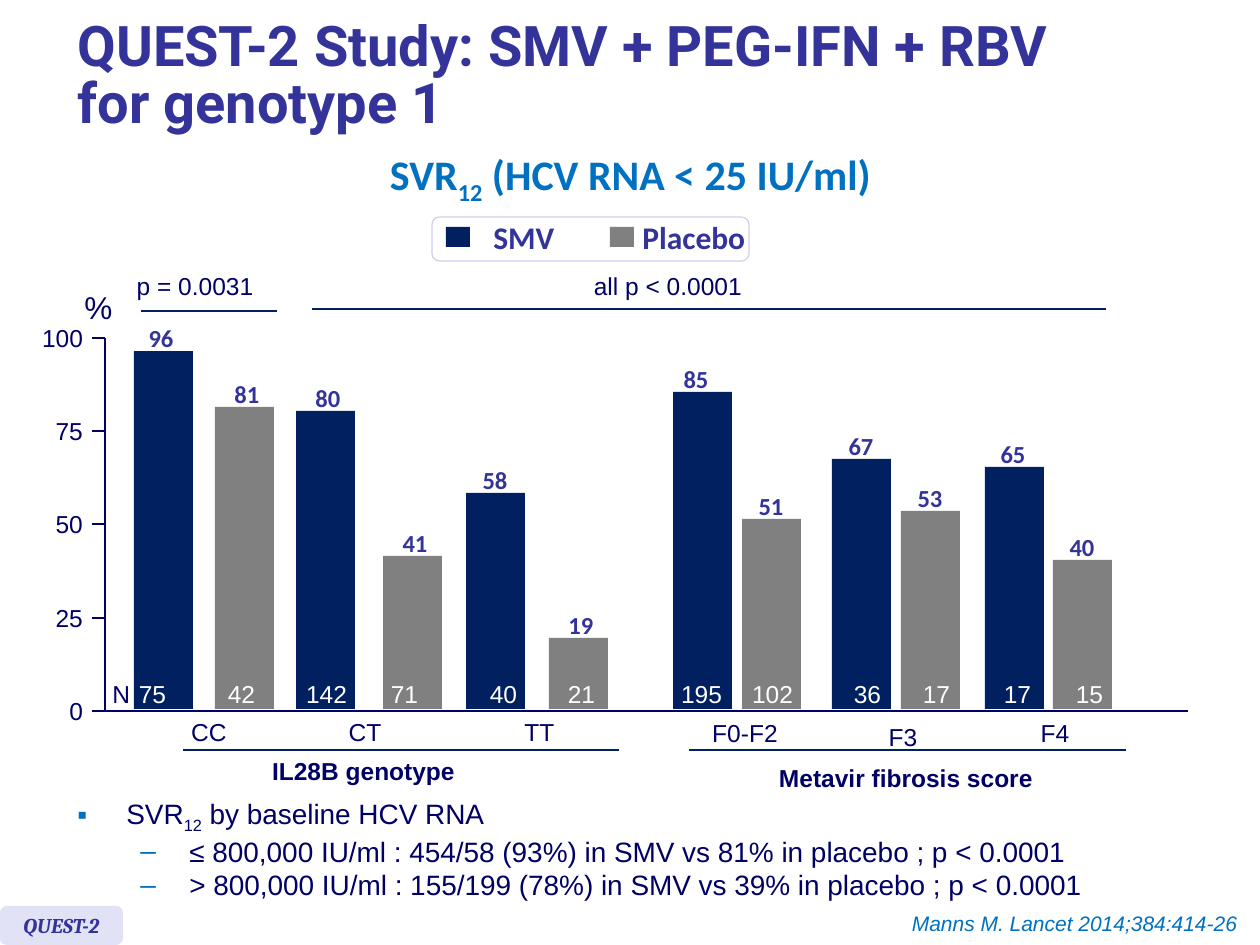
import pptx
import pptx.util
import pptx.dml.color
import pptx.enum.shapes
import pptx.enum.text
import pptx.oxml.ns
from lxml import etree

RGBColor = pptx.dml.color.RGBColor
ALIGN = pptx.enum.text.PP_ALIGN
ANCHOR = pptx.enum.text.MSO_ANCHOR
AUTO_SIZE = pptx.enum.text.MSO_AUTO_SIZE
SHAPE = pptx.enum.shapes.MSO_SHAPE
Pt = pptx.util.Pt

PX_PER_INCH = 126
NAVY = RGBColor(0x00, 0x20, 0x60)
GREY = RGBColor(0x80, 0x80, 0x80)
INK = RGBColor(0x00, 0x00, 0x66)
INDIGO = RGBColor(0x33, 0x33, 0x99)
BLUE = RGBColor(0x00, 0x70, 0xC0)
LAVENDER = RGBColor(0xE2, 0xE2, 0xF6)
LEGEND_EDGE = RGBColor(0xD0, 0xD0, 0xF0)
WHITE = RGBColor(0xFF, 0xFF, 0xFF)

AXIS = dict(name="Arial", size=Pt(14))
AXIS_BOLD = dict(AXIS, bold=True)
AXIS_UNIT = dict(name="Arial", size=Pt(18))
BODY = dict(name="Arial", size=Pt(16))
CITATION = dict(name="Arial", size=Pt(12), italic=True)
TITLE = dict(name="Roboto", size=Pt(32), bold=True)
HEADING = dict(name="Calibri", size=Pt(24), bold=True)
LEGEND = dict(name="Calibri", size=Pt(18), bold=True)
VALUE = dict(name="Calibri", size=Pt(14), bold=True)
BADGE = dict(name="Cambria", size=Pt(12), bold=True, italic=True)

# percent, N, then offsets from the axis: bar left, value centre, N centre
BARS = [
    (96, 75, 29, 56, 47), (81, 42, 110, 142, 136),
    (80, 142, 191, 223, 221), (41, 71, 278, 310, 299),
    (58, 40, 361, 390, 398), (19, 21, 444, 476, 476),
    (85, 195, 568, 591, 596), (51, 102, 637, 666, 667),
    (67, 36, 727, 756, 762), (53, 17, 796, 825, 831),
    (65, 17, 880, 908, 912), (40, 15, 948, 977, 984),
]
# name, centre, drop below the axis, width
CATEGORIES = [("CC", 104, 0, 62), ("CT", 260, 0, 58), ("TT", 434, 0, 55),
              ("F0-F2", 640, 1, 92), ("F3", 798, 5, 54), ("F4", 950, 1, 54)]
# name, line start, line end, centre, drop below the axis, width
FACTORS = [("IL28B genotype", 78, 514, 258, 39, 209),
           ("Metavir fibrosis score", 584, 1021, 801, 46, 280)]
# text, centre, width, line start, line end, line height above the plot
P_VALUES = [("p = 0.0031", 90, 142, 36, 172, 27),
            ("all p < 0.0001", 563, 174, 207, 1001, 29)]


def px(*lengths):
    return [round(length * 914400 / PX_PER_INCH) for length in lengths]


def write(paragraph, text, style, color):
    """Write text in runs; every second part between | marks is a subscript."""
    for index, part in enumerate(text.split("|")):
        run = paragraph.add_run()
        run.text = part
        for attribute, value in style.items():
            setattr(run.font, attribute, value)
        run.font.color.rgb = color
        if index % 2:
            run.font._element.set("baseline", "-25000")


def add_label(slide, box, text, style, color, align=ALIGN.CENTER,
              anchor=ANCHOR.MIDDLE, wrap=False, margin=None):
    frame = slide.shapes.add_textbox(*px(*box)).text_frame
    layout = dict(word_wrap=wrap, auto_size=AUTO_SIZE.SHAPE_TO_FIT_TEXT,
                  vertical_anchor=anchor)
    if margin is not None:
        for side in ("left", "top", "right", "bottom"):
            layout["margin_" + side] = margin
    for attribute, value in layout.items():
        setattr(frame, attribute, value)
    paragraph = frame.paragraphs[0]
    paragraph.alignment = align
    write(paragraph, text, style, color)
    return frame


def add_block(slide, box, fill, kind=SHAPE.RECTANGLE, edge=None):
    block = slide.shapes.add_shape(kind, *px(*box))
    block.shadow.inherit = False
    block.fill.solid()
    block.fill.fore_color.rgb = fill
    if edge is None:
        block.line.fill.background()
    else:
        block.line.color.rgb = edge
        block.line.width = Pt(0.75)
    return block


def add_rule(slide, x1, y1, x2, y2, color):
    rule = slide.shapes.add_connector(
        pptx.enum.shapes.MSO_CONNECTOR.STRAIGHT, *px(x1, y1, x2, y2))
    rule.line.color.rgb = color
    rule.line.width = Pt(1.5)
    etree.SubElement(rule._element.spPr, pptx.oxml.ns.qn("a:effectLst"))


def add_title(slide, box):
    title = slide.shapes.title
    title.left, title.top, title.width, title.height = px(*box)
    frame = title.text_frame
    frame.auto_size = AUTO_SIZE.NONE
    frame.vertical_anchor = ANCHOR.MIDDLE
    paragraph = frame.paragraphs[0]
    paragraph.alignment = ALIGN.LEFT
    paragraph.line_spacing = 0.85
    lines = ("QUEST-2 Study: SMV + PEG-IFN + RBV", "for genotype 1")
    write(paragraph, lines[0], TITLE, INDIGO)
    paragraph.add_line_break()
    write(paragraph, lines[1], TITLE, INDIGO)


def add_legend(slide, box):
    left, top, width, height = box
    frame = add_block(slide, box, WHITE, SHAPE.ROUNDED_RECTANGLE, LEGEND_EDGE)
    frame.adjustments[0] = 0.17
    for name, color, key, text, text_width in (
            ("SMV", NAVY, 14, 49, 87), ("Placebo", GREY, 178, 198, 130)):
        add_block(slide, (left + key, top + 10, 24, 20), color)
        add_label(slide, (left + text, top - 5, text_width, 50), name,
                  LEGEND, INDIGO, ALIGN.LEFT, ANCHOR.TOP)


def add_axes(slide, box):
    left, top, width, height = box
    base = top + height
    for percent in range(0, 101, 25):
        y = round(base - height * percent / 100)
        end = left if percent else left + width
        add_rule(slide, left - 13, y, end, y, INK)
        digits = 14 * len(str(percent))
        add_label(slide, (left - 22 - digits, y - 15, digits, 30),
                  str(percent), AXIS, INK, ALIGN.RIGHT, margin=0)
    add_rule(slide, left, top, left, base, INK)
    add_label(slide, (left - 33, top - 56, 53, 50), "%", AXIS_UNIT, INK,
              ALIGN.LEFT, ANCHOR.TOP)


def add_bars(slide, box):
    left, top, width, height = box
    base = top + height - 2
    for index, (percent, count, bar, value, n) in enumerate(BARS):
        bar_height = round(height * percent / 100)
        bar_top = base - bar_height
        add_block(slide, (left + bar, bar_top, 59, bar_height),
                  GREY if index % 2 else NAVY)
        add_label(slide, (left + value - 30, bar_top - 35, 60, 43),
                  str(percent), VALUE, INDIGO)
        n_width = 25 + 14 * len(str(count))
        add_label(slide, (left + n - n_width // 2, base - 37, n_width, 43),
                  str(count), AXIS, WHITE)
    add_label(slide, (left - 5, base - 37, 43, 43), "N", AXIS, INK, ALIGN.LEFT)


def add_annotations(slide, box):
    left, top, width, height = box
    base = top + height
    for name, centre, drop, text_width in CATEGORIES:
        add_label(slide, (left + centre - text_width // 2, base + drop,
                          text_width, 43), name, AXIS, INK, anchor=ANCHOR.TOP)
    for name, start, end, centre, drop, text_width in FACTORS:
        add_rule(slide, left + start, base + 39, left + end, base + 39, NAVY)
        add_label(slide, (left + centre - text_width // 2, base + drop,
                          text_width, 43), name, AXIS_BOLD, INK,
                  anchor=ANCHOR.TOP)
    for text, centre, text_width, start, end, rise in P_VALUES:
        add_rule(slide, left + start, top - rise, left + end, top - rise, NAVY)
        add_label(slide, (left + centre - text_width // 2, top - 73,
                          text_width, 43), text, AXIS, INK, anchor=ANCHOR.TOP)


def add_findings(slide, box):
    findings = [
        (0, "SVR|12| by baseline HCV RNA"),
        (1, "≤ 800,000 IU/ml : 454/58 (93%) in SMV vs 81% in placebo ; p < 0.0001"),
        (1, "> 800,000 IU/ml : 155/199 (78%) in SMV vs 39% in placebo ; p < 0.0001"),
    ]
    frame = slide.shapes.add_textbox(*px(*box)).text_frame
    frame.word_wrap = False
    frame.auto_size = AUTO_SIZE.SHAPE_TO_FIT_TEXT
    for index, (level, text) in enumerate(findings):
        paragraph = frame.add_paragraph() if index else frame.paragraphs[0]
        paragraph.level = level
        properties = paragraph._p.get_or_add_pPr()
        indent, hanging = px(49 + 63 * level, -49)
        properties.set("marL", str(indent))
        properties.set("indent", str(hanging))
        qn = pptx.oxml.ns.qn
        bullet_color = etree.SubElement(properties, qn("a:buClr"))
        etree.SubElement(bullet_color, qn("a:srgbClr"), val=str(BLUE))
        etree.SubElement(properties, qn("a:buFont"), typeface="Arial")
        etree.SubElement(properties, qn("a:buChar"), char="▪–"[level])
        write(paragraph, text, BODY, INK)


def add_footer(slide, box):
    left, top, width, height = box
    add_label(slide, (left + 891, top - 2, 359, 38),
              "Manns M. Lancet 2014;384:414-26", CITATION, BLUE,
              ALIGN.RIGHT, ANCHOR.TOP)
    badge = add_block(slide, (left, top, 123, height), LAVENDER,
                      SHAPE.ROUNDED_RECTANGLE)
    badge.adjustments[0] = 0.17
    frame = badge.text_frame
    frame.word_wrap = False
    frame.vertical_anchor = ANCHOR.MIDDLE
    frame.paragraphs[0].alignment = ALIGN.CENTER
    write(frame.paragraphs[0], "QUEST-2", BADGE, INDIGO)


def main():
    deck = pptx.Presentation()
    deck.slide_width, deck.slide_height = px(1260, 945)
    slide = deck.slides.add_slide(deck.slide_layouts[5])
    add_title(slide, (65, 10, 1150, 135))
    heading = add_label(slide, (362, 171, 537, 44),
                        "SVR|12| (HCV RNA < 25 IU/ml)", HEADING, BLUE, wrap=True)
    heading.paragraphs[0].line_spacing = Pt(15.2)
    plot = (105, 338, 1083, 373)
    for add_part in (add_bars, add_axes, add_annotations):
        add_part(slide, plot)
    add_findings(slide, (65, 790, 1071, 115))
    add_footer(slide, (0, 906, 1260, 39))
    add_legend(slide, (432, 217, 317, 44))
    deck.save("out.pptx")


if __name__ == "__main__":
    main()
